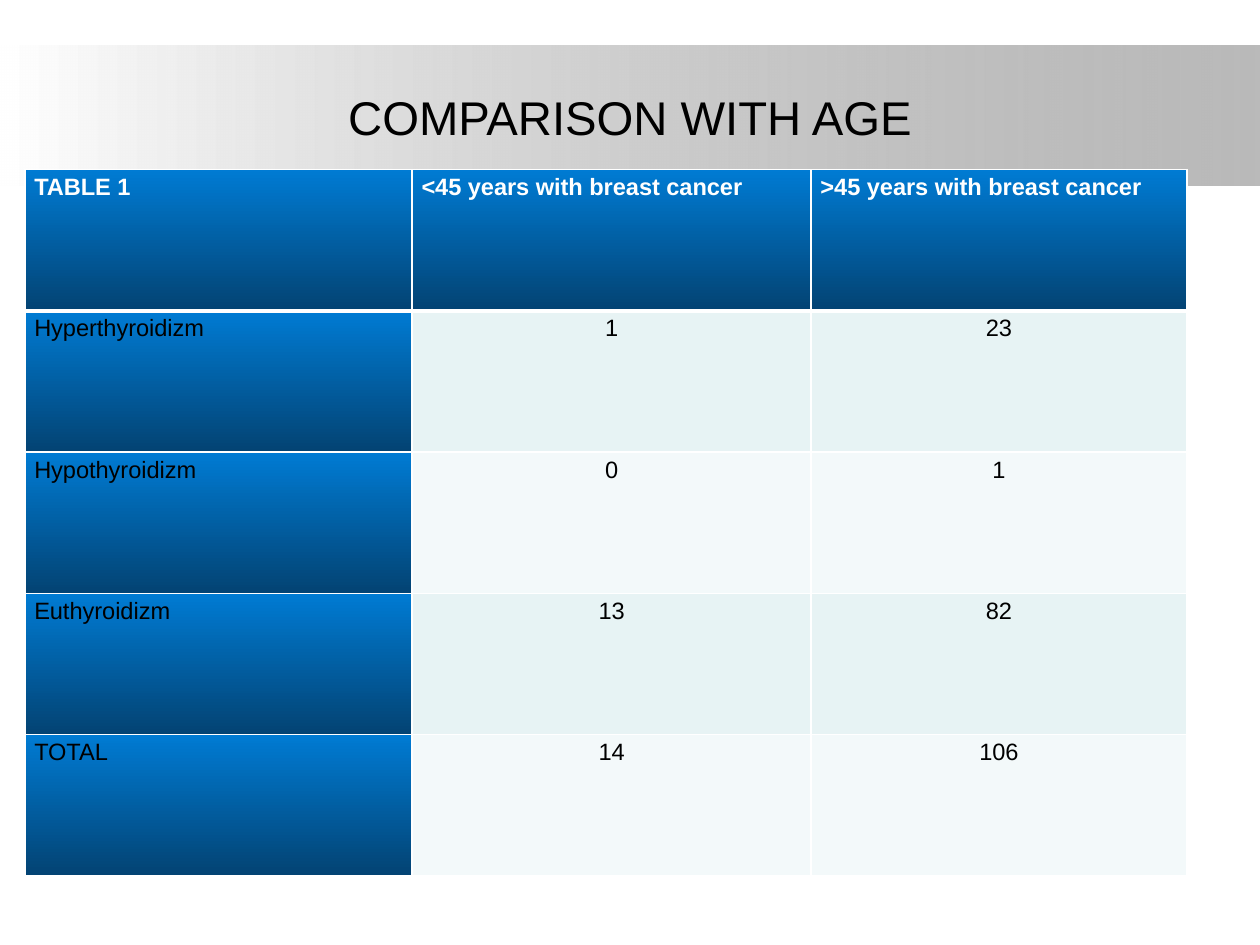
from pptx import Presentation
from pptx.dml.color import RGBColor as RGB
from pptx.enum.shapes import MSO_SHAPE as Shape
from pptx.enum.text import MSO_ANCHOR as Anchor, PP_ALIGN as Align
from pptx.oxml import parse_xml
from pptx.oxml.ns import nsdecls, qn
from pptx.util import Pt

HUES = {
    "white": "FFFFFF", "black": "000000", "gray": "808080",
    "blue": "007BD3", "navy": "034373", "mint": "E7F3F4", "pale": "F3F9FA",
}
ROWS = [
    ("TABLE 1", "<45 years with breast cancer", ">45 years with breast cancer"),
    ("Hyperthyroidizm", "1", "23"),
    ("Hypothyroidizm", "0", "1"),
    ("Euthyroidizm", "13", "82"),
    ("TOTAL", "14", "106"),
]


def write(frame, text, size=13.5, hue="black", bold=False, align=Align.LEFT):
    frame.word_wrap = True
    para = frame.paragraphs[0]
    para.alignment = align
    run = para.add_run()
    run.text = text
    font = run.font
    font.name, font.size, font.bold = "Arial", Pt(size), bold
    font.color.rgb = RGB.from_string(HUES[hue])


def blend(fill, first, last, angle):
    fill.gradient()
    fill.gradient_angle = angle
    for stop, hue in zip(fill.gradient_stops, (first, last)):
        stop.color.rgb = RGB.from_string(HUES[hue])
    for stop, place in zip(fill.gradient_stops, (0, 1)):
        stop.position = place


def border(cell, **widths):
    props = cell._tc.get_or_add_tcPr()
    for index, side in enumerate("LRTB"):
        width = Pt(widths.get(side, 1))
        props.insert(index, parse_xml(
            f'<a:ln{side} {nsdecls("a")} w="{width}"><a:solidFill>'
            f'<a:srgbClr val="{HUES["white"]}"/></a:solidFill></a:ln{side}>'))


class Deck:
    def __init__(self, wide, high):
        self.show = Presentation()
        self.show.slide_width, self.show.slide_height = Pt(wide), Pt(high)
        self.slide = self.show.slides.add_slide(self.show.slide_layouts[5])

    def band(self, left, top, wide, high):
        box = self.slide.shapes.add_shape(
            Shape.RECTANGLE, Pt(left), Pt(top), Pt(wide), Pt(high))
        box.shadow.inherit = False
        box.line.fill.background()
        blend(box.fill, "white", "gray", 0)
        # Fade the dark end, and send the band behind the title
        dark = list(box._element.iter(qn("a:srgbClr")))[-1]
        dark.append(parse_xml(f'<a:alpha {nsdecls("a")} val="54000"/>'))
        self.slide.shapes._spTree.insert(2, box._element)

    def title(self, text, left, top, wide, high):
        box = self.slide.shapes.title
        box.left, box.top, box.width, box.height = map(Pt, (left, top, wide, high))
        box.text_frame.vertical_anchor = Anchor.MIDDLE
        write(box.text_frame, text, size=27, align=Align.CENTER)

    def table(self, rows, left, top, cols, high):
        grid = self.slide.shapes.add_table(
            len(rows), len(cols), Pt(left), Pt(top),
            Pt(sum(cols)), Pt(high * len(rows))).table
        grid.first_row = grid.horz_banding = False
        for col, wide in zip(grid.columns, cols):
            col.width = Pt(wide)
        for r, row in enumerate(rows):
            grid.rows[r].height = Pt(high)
            for c, text in enumerate(row):
                self.cell(grid.cell(r, c), text, r, c)

    def cell(self, cell, text, r, c):
        head = r == 0
        cell.margin_left = cell.margin_right = Pt(5.4)
        cell.margin_top = cell.margin_bottom = Pt(2.7)
        write(cell.text_frame, text, hue="white" if head else "black", bold=head,
              align=Align.LEFT if head or c == 0 else Align.CENTER)
        if head or c == 0:
            blend(cell.fill, "blue", "navy", 270)
        else:
            cell.fill.solid()
            cell.fill.fore_color.rgb = RGB.from_string(HUES["mint" if r % 2 else "pale"])
        border(cell, T=3 if r == 1 else 1, B=3 if head else 1)


def main():
    deck = Deck(720, 540)
    # Header
    deck.band(0, 25.8, 720, 80.4)
    deck.title("COMPARISON WITH AGE", 36, 21.6, 648, 90)
    # Age groups by thyroid state
    deck.table(ROWS, 14.2, 96.9, cols=(221.3, 228, 214.7), high=80.75)
    deck.show.save("out.pptx")


if __name__ == "__main__":
    main()
